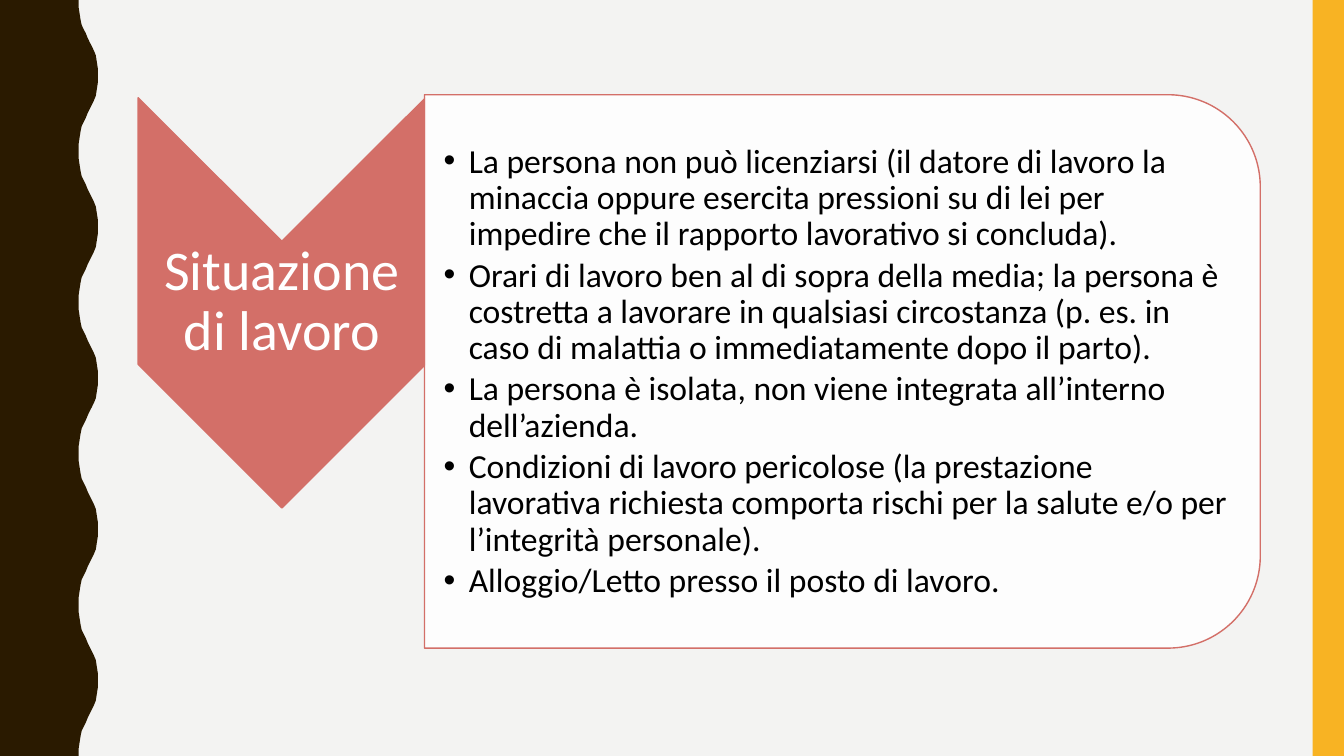
from dataclasses import dataclass

from lxml.etree import SubElement
from pptx import Presentation
from pptx.dml.color import RGBColor
from pptx.enum.shapes import MSO_SHAPE as Preset
from pptx.enum.text import MSO_ANCHOR as Anchor, PP_ALIGN as Align
from pptx.oxml.ns import qn
from pptx.util import Inches, Pt

COLORS = {
    "paper": "F3F3F2",
    "wave": "2A1A00",
    "stripe": "F8B323",
    "coral": "D36F68",
    "white": "FFFFFF",
    "black": "000000",
}
WIDTH, HEIGHT = Inches(13.33), Inches(7.5)
FONT = "Calibri"
WAVE_COUNT = 5
CREST = [
    (5.85, 0), (5.85, 0.93), (5.93, 1.87), (6, 2.67), (6.08, 3.33),
    (6.23, 3.87), (6.38, 4.4), (6.53, 5.07), (6.68, 5.6), (6.83, 6.13),
    (6.98, 6.67), (7.13, 7.33), (7.2, 8.13), (7.28, 9.07), (7.28, 10),
]
TOPIC = "Situazione di lavoro"
SIGNS = [
    "La persona non può licenziarsi (il datore di lavoro la minaccia oppure esercita pressioni su di lei per impedire che il rapporto lavorativo si concluda).",
    "Orari di lavoro ben al di sopra della media; la persona è costretta a lavorare in qualsiasi circostanza (p. es. in caso di malattia o immediatamente dopo il parto).",
    "La persona è isolata, non viene integrata all’interno dell’azienda.",
    "Condizioni di lavoro pericolose (la prestazione lavorativa richiesta comporta rischi per la salute e/o per l’integrità personale).",
    "Alloggio/Letto presso il posto di lavoro.",
]


def across(percent: float) -> int:
    return round(WIDTH * percent / 100)


def down(percent: float) -> int:
    return round(HEIGHT * percent / 100)


@dataclass(frozen=True)
class Frame:
    left: float
    top: float
    width: float
    height: float

    def box(self) -> tuple[int, int, int, int]:
        return across(self.left), down(self.top), across(self.width), down(self.height)


@dataclass(frozen=True)
class Block:
    frame: Frame
    preset: Preset
    fill: str
    line: str | None = None
    turned: bool = False
    opacity: int = 100


@dataclass(frozen=True)
class Copy:
    frame: Frame
    lines: list[str]
    size: int
    color: str
    align: Align
    after: float
    insets: tuple[float, float]
    bulleted: bool = False


STRIPE = Block(Frame(97.67, 0, 2.33, 100), Preset.RECTANGLE, "stripe")
ARROW = Block(Frame(10.28, 12.93, 21.38, 54.27), Preset.CHEVRON, "coral", "coral", True)
PANEL = Block(Frame(31.58, 12.53, 62.19, 73.2), Preset.ROUND_2_SAME_RECTANGLE,
              "white", "coral", True, 90)
HEADING = Copy(Frame(10.28, 31.87, 21.38, 16.27), [TOPIC], 40, "white",
               Align.CENTER, 14, (0.03, 0.03))
DETAILS = Copy(Frame(31.58, 16.13, 60.16, 66.13), SIGNS, 24, "black",
               Align.LEFT, 3.6, (0.19, 0.02), True)


def paint(fill, color: str) -> None:
    fill.solid()
    fill.fore_color.rgb = RGBColor.from_string(COLORS[color])


def draw_wave(slide) -> None:
    period = 100 / WAVE_COUNT
    ebb = [(x, period - y) for x, y in reversed(CREST[:-1])]
    edge = [(across(x), down(period * n + y))
            for n in range(WAVE_COUNT) for x, y in CREST + ebb]
    outline = slide.shapes.build_freeform(0, 0)
    outline.add_line_segments(edge + [(0, HEIGHT)], close=True)
    wave = outline.convert_to_shape()
    wave.shadow.inherit = False
    paint(wave.fill, "wave")
    wave.line.fill.background()


def draw_block(slide, block: Block) -> None:
    left, top, width, height = block.frame.box()
    if block.turned:
        left, top = left + (width - height) // 2, top + (height - width) // 2
        width, height = height, width
    shape = slide.shapes.add_shape(block.preset, left, top, width, height)
    shape.rotation = 90 if block.turned else 0
    shape.shadow.inherit = False
    paint(shape.fill, block.fill)
    if block.opacity < 100:
        tint = shape.fill._xPr.find(qn("a:solidFill"))[0]
        SubElement(tint, qn("a:alpha"), val=str(block.opacity * 1000))
    if block.line:
        paint(shape.line.fill, block.line)
        shape.line.width = Pt(1)
    else:
        shape.line.fill.background()


def add_bullet(paragraph) -> None:
    properties = paragraph._p.get_or_add_pPr()
    properties.set("marL", str(Inches(0.25)))
    properties.set("indent", str(-Inches(0.25)))
    fonts = SubElement(properties, qn("a:buFont"))
    fonts.set("typeface", "Arial")
    SubElement(properties, qn("a:buChar"), char="•")


def write(slide, copy: Copy) -> None:
    frame = slide.shapes.add_textbox(*copy.frame.box()).text_frame
    frame.word_wrap = True
    frame.vertical_anchor = Anchor.MIDDLE
    first, rest = copy.insets
    frame.margin_left = Inches(first)
    frame.margin_top = frame.margin_right = frame.margin_bottom = Inches(rest)
    frame.text = "\n".join(copy.lines)
    for paragraph in frame.paragraphs:
        paragraph.alignment = copy.align
        paragraph.line_spacing = 0.9
        paragraph.space_after = Pt(copy.after)
        if copy.bulleted:
            add_bullet(paragraph)
        paragraph.font.name = FONT
        paragraph.font.size = Pt(copy.size)
        paragraph.font.color.rgb = RGBColor.from_string(COLORS[copy.color])


def main() -> None:
    deck = Presentation()
    deck.slide_width, deck.slide_height = WIDTH, HEIGHT
    slide = deck.slides.add_slide(deck.slide_layouts[6])
    paint(slide.background.fill, "paper")
    draw_wave(slide)
    for block in (STRIPE, ARROW, PANEL):
        draw_block(slide, block)
    for copy in (HEADING, DETAILS):
        write(slide, copy)
    deck.save("out.pptx")


if __name__ == "__main__":
    main()
